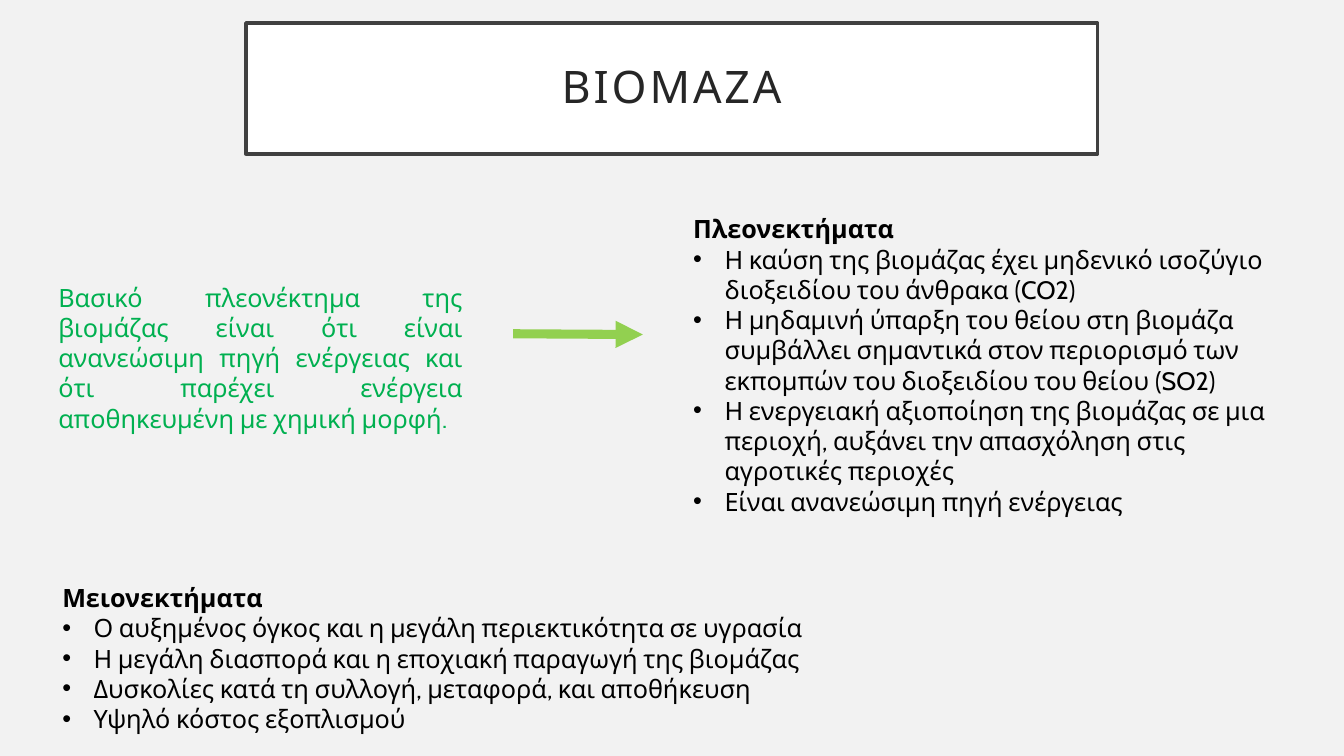
from lxml import etree
from pptx import Presentation
from pptx import util as u
from pptx.dml.color import RGBColor
from pptx.enum import shapes, text
from pptx.oxml.ns import qn

FONT = "Cabin"
INDENT = u.Cm(0.79)


def paint(color_format, color):
    color_format.rgb = RGBColor.from_string(color)


def add_run(paragraph, words, size, color, bold=False):
    run = paragraph.add_run()
    run.text = words
    run.font.name = FONT
    run.font.size = u.Pt(size)
    run.font.bold = bold
    paint(run.font.color, color)
    return run


presentation = Presentation()
presentation.slide_width = u.Cm(33.87)
presentation.slide_height = u.Cm(19.05)
slide = presentation.slides.add_slide(presentation.slide_layouts[5])
slide.background.fill.solid()
paint(slide.background.fill.fore_color, "F2F2F2")

# Title
title = slide.shapes.title
title.left, title.top, title.width, title.height = u.Cm(6.2), u.Cm(0.58), u.Cm(21.46), u.Cm(3.3)
title.fill.solid()
paint(title.fill.fore_color, "FFFFFF")
paint(title.line.color, "404040")
title.line.width = u.Pt(2.5)
frame = title.text_frame
frame.auto_size = text.MSO_AUTO_SIZE.NONE
frame.vertical_anchor = text.MSO_ANCHOR.MIDDLE
frame.margin_left = frame.margin_right = frame.margin_top = frame.margin_bottom = u.Cm(0.5)
paragraph = frame.paragraphs[0]
paragraph.alignment = text.PP_ALIGN.CENTER
paragraph.line_spacing = 0.9
run = add_run(paragraph, "ΒΙΟΜΑΖΑ", 32, "262626")
run.font._element.set("spc", "200")

# Main advantage
summary = slide.shapes.add_textbox(u.Cm(1.22), u.Cm(6.98), u.Cm(10.69), u.Cm(3.78))
summary.text_frame.word_wrap = True
paragraph = summary.text_frame.paragraphs[0]
paragraph.alignment = text.PP_ALIGN.JUSTIFY
add_run(
    paragraph,
    "Βασικό πλεονέκτημα της βιομάζας είναι ότι είναι ανανεώσιμη πηγή ενέργειας "
    "και ότι παρέχει ενέργεια αποθηκευμένη με χημική μορφή.",
    18, "00B050",
)

# Arrow to the advantages
arrow = slide.shapes.add_connector(
    shapes.MSO_CONNECTOR.STRAIGHT, u.Cm(12.93), u.Cm(8.41), u.Cm(16.2), u.Cm(8.43)
)
paint(arrow.line.color, "92D050")
arrow.line.width = u.Pt(6.5)
etree.SubElement(arrow.line._get_or_add_ln(), qn("a:tailEnd"), type="triangle")
etree.SubElement(arrow._element.spPr, qn("a:effectLst"))

# Headed bullet lists: left, top, width, height, heading, items
bullet_lists = [
    (17.22, 5.26, 15.98, 7.95, "Πλεονεκτήματα", [
        "Η καύση της βιομάζας έχει μηδενικό ισοζύγιο διοξειδίου του άνθρακα (CO2)",
        "Η μηδαμινή ύπαρξη του θείου στη βιομάζα συμβάλλει σημαντικά στον περιορισμό "
        "των εκπομπών του διοξειδίου του θείου (SO2)",
        "Η ενεργειακή αξιοποίηση της βιομάζας σε μια περιοχή, αυξάνει την απασχόληση "
        "στις αγροτικές περιοχές",
        "Είναι ανανεώσιμη πηγή ενέργειας",
    ]),
    (1.32, 14.55, 28.65, 4.11, "Μειονεκτήματα", [
        "Ο αυξημένος όγκος και η μεγάλη περιεκτικότητα σε υγρασία",
        "Η μεγάλη διασπορά και η εποχιακή παραγωγή της βιομάζας",
        "Δυσκολίες κατά τη συλλογή, μεταφορά, και αποθήκευση",
        "Υψηλό κόστος εξοπλισμού",
    ]),
]
for left, top, width, height, heading, items in bullet_lists:
    box = slide.shapes.add_textbox(u.Cm(left), u.Cm(top), u.Cm(width), u.Cm(height))
    frame = box.text_frame
    frame.word_wrap = True
    frame.auto_size = text.MSO_AUTO_SIZE.SHAPE_TO_FIT_TEXT
    add_run(frame.paragraphs[0], heading, 18, "000000", bold=True)
    for item in items:
        paragraph = frame.add_paragraph()
        properties = paragraph._p.get_or_add_pPr()
        properties.set("marL", str(INDENT))
        properties.set("indent", str(-INDENT))
        etree.SubElement(properties, qn("a:buFont"), typeface="Arial")
        etree.SubElement(properties, qn("a:buChar"), char="•")
        add_run(paragraph, item, 18, "000000")

presentation.save("out.pptx")
